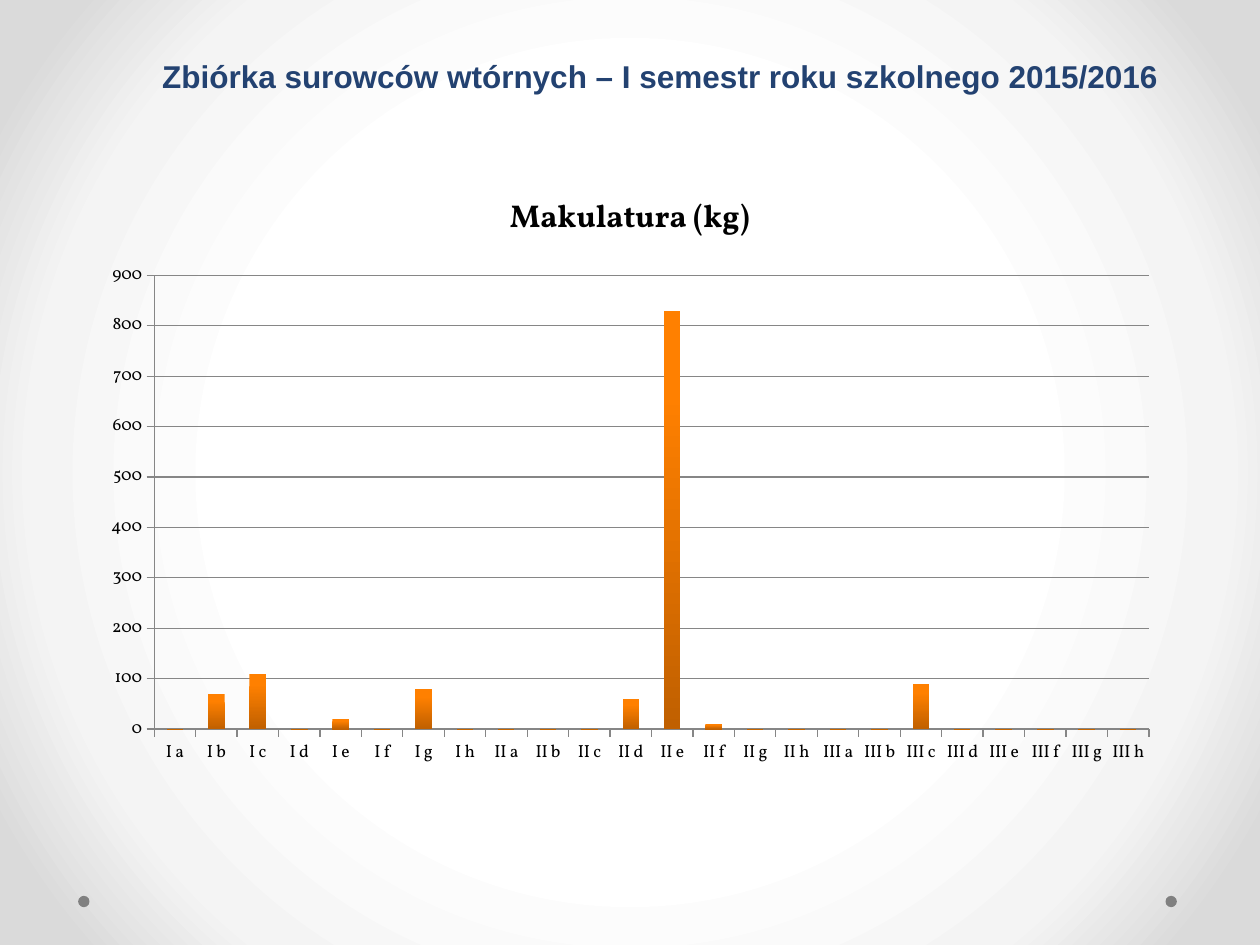
from copy import deepcopy
from dataclasses import dataclass

from lxml import etree
from pptx import Presentation
from pptx.chart import data
from pptx.dml.color import RGBColor
from pptx.enum import chart as charts, shapes, text
from pptx.oxml import ns
from pptx.util import Inches, Pt


@dataclass(frozen=True)
class Theme:
    title_font: str = "Arial"
    chart_font: str = "Vollkorn"
    title_size: int = 18
    label_size: int = 10
    title: str = "234271"
    label: str = "000000"
    grid: str = "868686"
    dot: str = "808080"
    bar: tuple = ((0.2, "FF8000"), (1, "C06000"))
    backdrop: tuple = ((0.5, "FFFFFF"), (0.76, "F4F4F4"), (0.92, "DADADA"))


THEME = Theme()
HEADING = "Zbiórka surowców wtórnych – I semestr roku szkolnego 2015/2016"
SERIES = "Makulatura (kg)"
CLASSES = [f"{year} {letter}" for year in ("I", "II", "III") for letter in "abcdefgh"]
COLLECTED = {"I b": 70, "I c": 110, "I e": 20, "I g": 80,
             "II d": 60, "II e": 830, "II f": 10, "III c": 90}


def apply(target, values):
    for name, value in values.items():
        setattr(target, name, value)


def style_font(font, name, size, color, bold):
    apply(font, {"name": name, "size": Pt(size), "bold": bold})
    font.color.rgb = RGBColor.from_string(color)


def set_stops(fill, stops):
    for stop, (position, color) in zip(fill.gradient_stops, stops):
        stop.position = position
        stop.color.rgb = RGBColor.from_string(color)


def paint_backdrop(page):
    fill = page.background.fill
    fill.gradient()
    gradient = page.element.find(".//" + ns.qn("a:gradFill"))
    stops = gradient.find(ns.qn("a:gsLst"))
    stops.append(deepcopy(stops[-1]))
    set_stops(fill, THEME.backdrop)
    gradient.remove(gradient.find(ns.qn("a:lin")))
    circle = etree.Element(ns.qn("a:path"), path="circle")
    center = {side: "50000" for side in "ltrb"}
    etree.SubElement(circle, ns.qn("a:fillToRect"), center)
    stops.addnext(circle)


def add_dots(page, lefts, top, size):
    for left in lefts:
        dot = page.shapes.add_shape(shapes.MSO_SHAPE.OVAL, Inches(left),
                                    Inches(top), Inches(size), Inches(size))
        dot.shadow.inherit = False
        dot.fill.solid()
        dot.fill.fore_color.rgb = RGBColor.from_string(THEME.dot)
        dot.line.fill.background()


def place_title(page, box):
    title = page.shapes.title
    apply(title, dict(zip(("left", "top", "width", "height"), map(Inches, box))))
    frame = title.text_frame
    apply(frame, {"text": HEADING, "word_wrap": True,
                  "auto_size": text.MSO_AUTO_SIZE.NONE,
                  "vertical_anchor": text.MSO_ANCHOR.TOP})
    para = frame.paragraphs[0]
    apply(para, {"alignment": text.PP_ALIGN.CENTER, "line_spacing": 1.15,
                 "space_before": Pt(0), "space_after": Pt(10)})
    style_font(para.runs[0].font, THEME.title_font, THEME.title_size, THEME.title, True)


def add_paper_chart(page, box):
    content = data.CategoryChartData()
    content.categories = CLASSES
    content.add_series(SERIES, [COLLECTED.get(name, 0) for name in CLASSES])
    chart = page.shapes.add_chart(charts.XL_CHART_TYPE.COLUMN_CLUSTERED,
                                  *map(Inches, box), content).chart
    style_font(chart.font, THEME.chart_font, THEME.label_size, THEME.label, False)
    chart.has_legend = False
    chart.has_title = True
    heading = chart.chart_title.text_frame
    heading.text = SERIES
    style_font(heading.paragraphs[0].runs[0].font, THEME.chart_font,
               THEME.title_size, THEME.label, True)
    chart.chart_title.include_in_layout = False

    value_axis = chart.value_axis
    apply(value_axis, {"minimum_scale": 0, "maximum_scale": 900, "major_unit": 100,
                       "has_major_gridlines": True})
    for axis in (chart.category_axis, value_axis):
        apply(axis, {"major_tick_mark": charts.XL_TICK_MARK.OUTSIDE,
                     "minor_tick_mark": charts.XL_TICK_MARK.NONE})
    for part in (chart.category_axis, value_axis, value_axis.major_gridlines):
        part.format.line.width = Pt(0.75)
        part.format.line.color.rgb = RGBColor.from_string(THEME.grid)

    plot = chart.plots[0]
    apply(plot, {"gap_width": 150, "vary_by_categories": False})
    fill = plot.series[0].format.fill
    fill.gradient()
    fill.gradient_angle = 270
    set_stops(fill, THEME.bar)


def main():
    deck = Presentation()
    apply(deck, {"slide_width": Inches(10), "slide_height": Inches(7.5)})
    page = deck.slides.add_slide(deck.slide_layouts.get_by_name("Title Only"))
    paint_backdrop(page)
    add_dots(page, (0.62, 9.25), 7.11, 0.09)
    place_title(page, (0.83, 0.36, 8.82, 0.89))
    add_paper_chart(page, (0.71, 1.34, 8.58, 4.83))
    deck.save("out.pptx")


if __name__ == "__main__":
    main()
